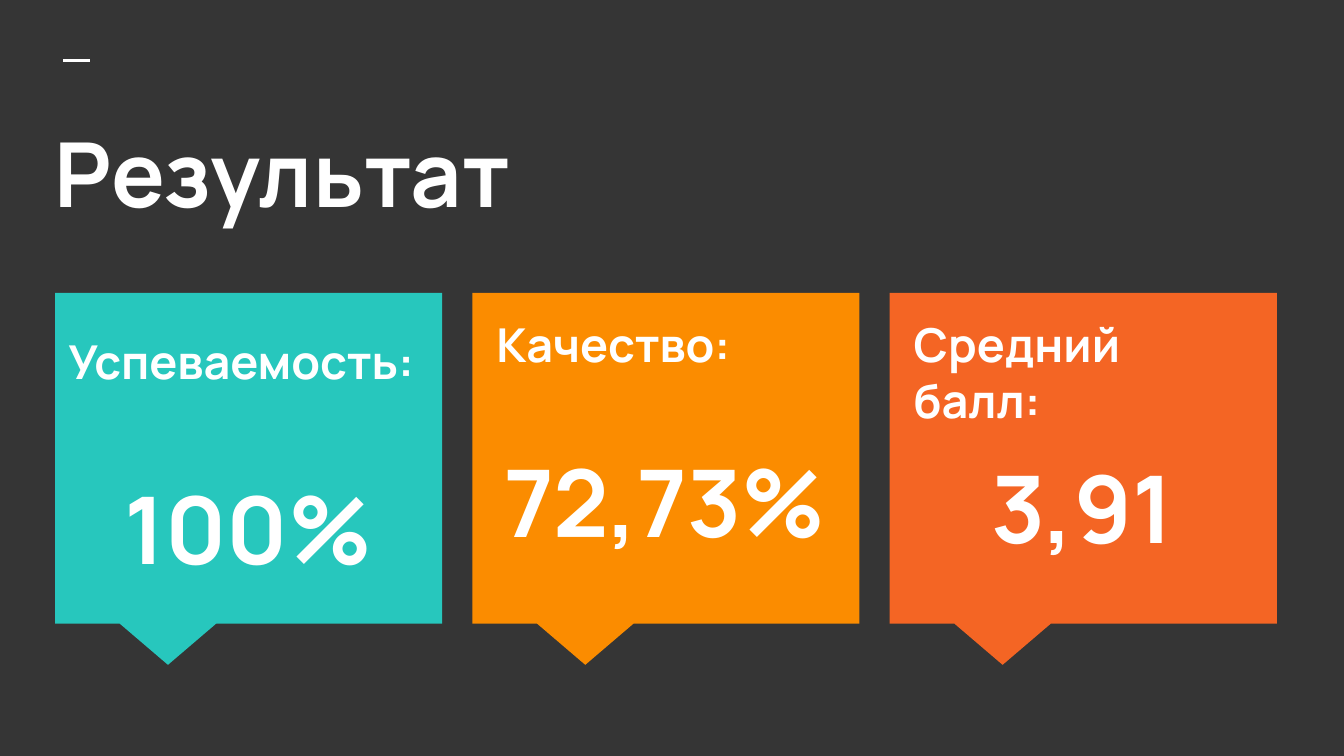
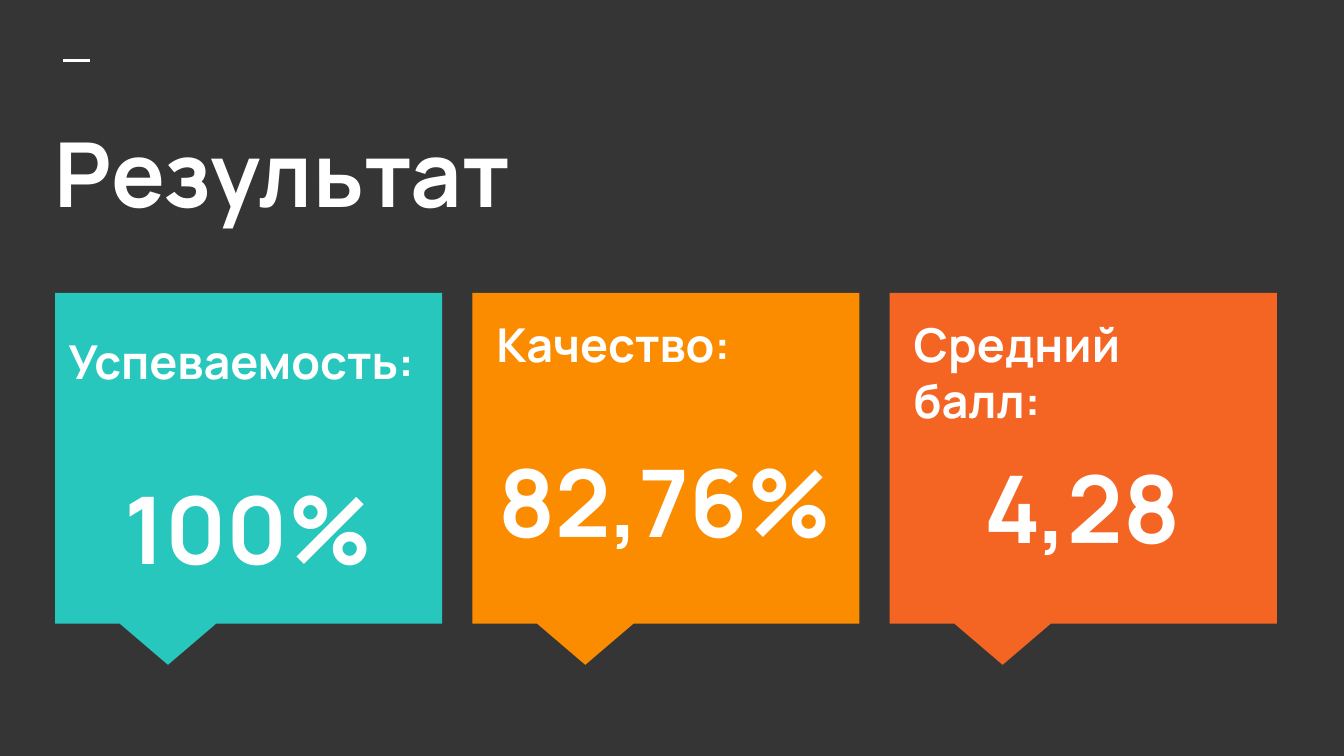
from pptx import Presentation
from pptx.dml.color import RGBColor
from pptx.enum.shapes import MSO_CONNECTOR, MSO_SHAPE
from pptx.enum.text import MSO_ANCHOR, PP_ALIGN
from pptx.oxml.ns import qn
from pptx.util import Inches, Pt
from lxml.etree import SubElement

DARK = RGBColor(0x35, 0x35, 0x35)
WHITE = RGBColor(0xFF, 0xFF, 0xFF)
TEAL = RGBColor(0x27, 0xC7, 0xBD)
AMBER = RGBColor(0xFB, 0x8C, 0x00)
ORANGE = RGBColor(0xF4, 0x65, 0x24)

CARD_LEFT, CARD_TOP = 0.41, 2.18
CARD_WIDTH, CARD_HEIGHT = 2.88, 2.46
CARD_STEP = (6.62 - CARD_LEFT) / 2


class Deck:
    font = "Manrope"

    def __init__(self):
        self.prs = Presentation()
        self.prs.slide_width = Inches(10)
        self.prs.slide_height = Inches(10 * 9 / 16)
        self.slide = None

    def add_slide(self, title):
        self.slide = self.prs.slides.add_slide(self.prs.slide_layouts[6])
        fill = self.slide.background.fill
        fill.solid()
        fill.fore_color.rgb = DARK
        self.rule(0.47, 0.45, 0.67)
        tf = self.textbox(0.31, 0.78, 9.43, 1.12)
        self.paragraph(tf.paragraphs[0], title, 48)

    def rule(self, left, top, right):
        line = self.slide.shapes.add_connector(
            MSO_CONNECTOR.STRAIGHT, Inches(left), Inches(top), Inches(right), Inches(top))
        line.line.color.rgb = WHITE
        line.line.width = Pt(1.5)
        SubElement(line.element.spPr, qn("a:effectLst"))

    def callout(self, left, top, width, height, color):
        sp = self.slide.shapes.add_shape(
            MSO_SHAPE.RECTANGULAR_CALLOUT,
            Inches(left), Inches(top), Inches(width), Inches(height))
        sp.adjustments[0] = -5 / 24
        sp.adjustments[1] = 5 / 8
        sp.shadow.inherit = False
        sp.fill.solid()
        sp.fill.fore_color.rgb = color
        sp.line.fill.background()
        return self.frame(sp, MSO_ANCHOR.MIDDLE)

    def textbox(self, left, top, width, height):
        box = self.slide.shapes.add_textbox(
            Inches(left), Inches(top), Inches(width), Inches(height))
        return self.frame(box, MSO_ANCHOR.TOP)

    def frame(self, shape, anchor):
        tf = shape.text_frame
        tf.word_wrap = True
        tf.vertical_anchor = anchor
        tf.margin_left = tf.margin_right = Inches(0.1)
        tf.margin_top = tf.margin_bottom = Inches(0.1)
        return tf

    def paragraph(self, p, text, size, align=PP_ALIGN.LEFT, before=0, after=0):
        p.text = text
        p.alignment = align
        p.space_before = Pt(before)
        p.space_after = Pt(after)
        for r in p.runs:
            r.font.name = self.font
            r.font.size = Pt(size)
            r.font.bold = True
            r.font.color.rgb = WHITE

    def metric(self, tf, label, value, gap):
        self.paragraph(tf.paragraphs[0], label, 25)
        self.paragraph(tf.add_paragraph(), value, 50, PP_ALIGN.CENTER, gap, 12)


def result_slide(deck, progress, quality, average):
    deck.add_slide("Результат")

    # Cards: the first holds its own text
    lefts = [CARD_LEFT + i * CARD_STEP for i in range(3)]
    frames = [deck.callout(left, CARD_TOP, CARD_WIDTH, CARD_HEIGHT, color)
              for left, color in zip(lefts, (TEAL, AMBER, ORANGE))]
    deck.metric(frames[0], "Успеваемость:", progress, 44)

    # Text laid over the other two cards
    overlays = (("Качество:", quality, 39), ("Средний балл:", average, 12))
    for left, (label, value, gap) in zip(lefts[1:], overlays):
        tf = deck.textbox(left + 0.08, 2.25, 2.71, 2.19)
        deck.metric(tf, label, value, gap)


def main():
    deck = Deck()
    result_slide(deck, "100%", "72,73%", "3,91")
    result_slide(deck, "100%", "82,76%", "4,28")
    deck.prs.save("out.pptx")


if __name__ == "__main__":
    main()
